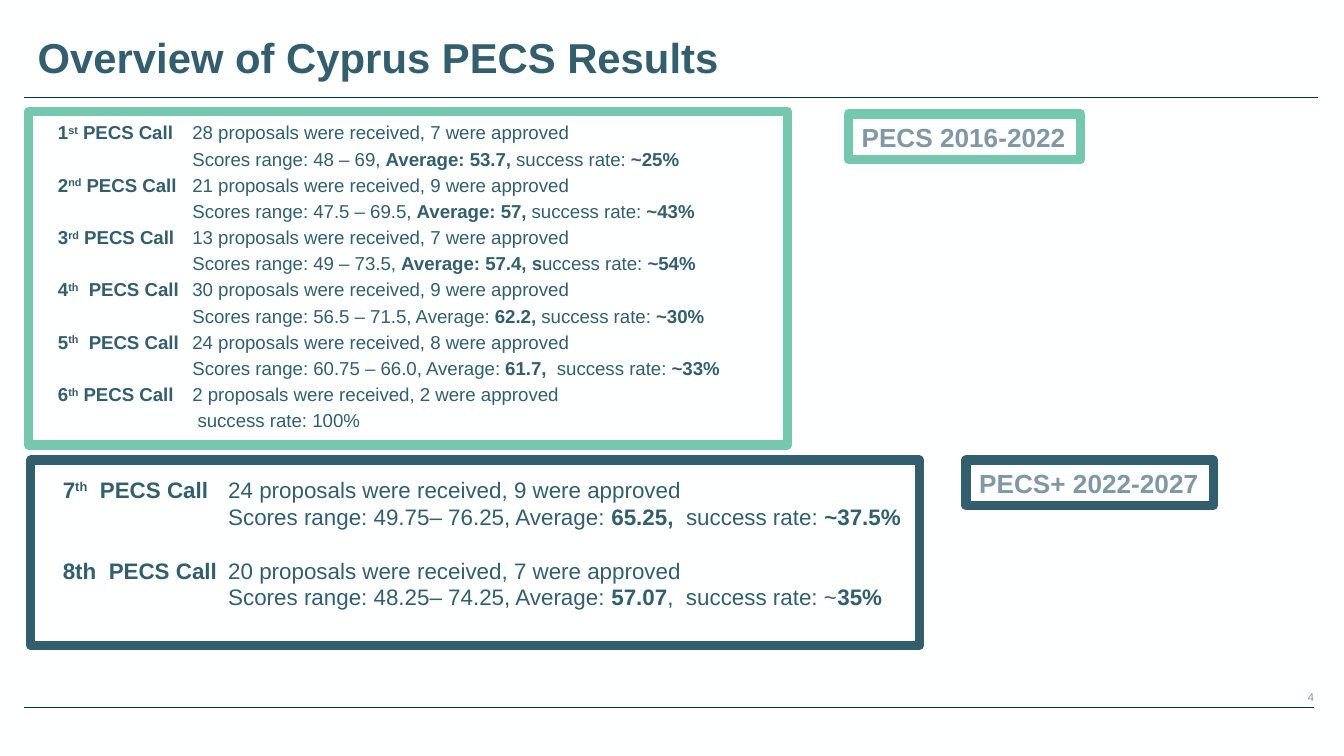
from pptx import Presentation
from pptx.dml.color import RGBColor
from pptx.enum.shapes import MSO_CONNECTOR, MSO_SHAPE
from pptx.enum.text import MSO_ANCHOR, PP_ALIGN
from pptx.oxml.ns import qn
from pptx.util import Pt
from lxml.etree import SubElement

NAVY, TEAL, GREEN, GREY, WHITE = "003249", "335E6E", "75C8AE", "8197A6", "FEFFFF"

FIRST_CALLS = [
    ("1", "st", " PECS Call", 28, 7,
     ["Scores range: 48 – 69, ", "Average: 53.7, ", "success rate: ", "~25%"]),
    ("2", "nd", " PECS Call", 21, 9,
     ["Scores range: 47.5 – 69.5, ", "Average: 57, ", "success rate: ", "~43%"]),
    ("3", "rd", " PECS Call", 13, 7,
     ["Scores range: 49 – 73.5, ", "Average: 57.4, s", "uccess rate: ", "~54%"]),
    ("4", "th", "  PECS Call", 30, 9,
     ["Scores range: 56.5 – 71.5, Average: ", "62.2, ", "success rate: ", "~30%"]),
    ("5", "th", "  PECS Call", 24, 8,
     ["Scores range: 60.75 – 66.0, Average: ", "61.7,  ", "success rate: ", "~33%"]),
    ("6", "th", " PECS Call", 2, 2, [" success rate: 100%"]),
]
PLUS_CALLS = [
    ("7", "th", "  PECS Call", 24, 9,
     ["Scores range: 49.75– 76.25, Average: ", "65.25,  ", "success rate: ", "~37.5%"]),
    ("8th", "", "  PECS Call", 20, 7,
     ["Scores range: 48.25– 74.25, Average: ", "57.07", ",  success rate: ~", "35%"]),
]


def rgb(value):
    return RGBColor.from_string(value)


class Deck:
    font = "Arial"

    def __init__(self, prs):
        self.s = prs.slides.add_slide(prs.slide_layouts[5])
        fill = self.s.background.fill
        fill.solid()
        fill.fore_color.rgb = rgb(WHITE)

    def run(self, p, text, size, color=TEAL, bold=False, raised=False):
        r = p.add_run()
        r.text = text
        r.font.name = self.font
        r.font.size = Pt(size)
        r.font.bold = bold
        r.font.color.rgb = rgb(color)
        if raised:
            r._r.get_or_add_rPr().set("baseline", "30000")

    def title(self, text, x, y, w, h, size):
        sp = self.s.shapes.title
        sp.left, sp.top, sp.width, sp.height = Pt(x), Pt(y), Pt(w), Pt(h)
        tf = sp.text_frame
        tf.vertical_anchor = MSO_ANCHOR.MIDDLE
        p = tf.paragraphs[0]
        p.alignment = PP_ALIGN.LEFT
        self.run(p, text, size, bold=True)

    def rule(self, x1, x2, y):
        line = self.s.shapes.add_connector(
            MSO_CONNECTOR.STRAIGHT, Pt(x1), Pt(y), Pt(x2), Pt(y))
        line.line.color.rgb = rgb(NAVY)
        line.line.width = Pt(0.75)
        SubElement(line._element.spPr, qn("a:effectLst"))

    def frame(self, x, y, w, h, color, label=None):
        sp = self.s.shapes.add_shape(MSO_SHAPE.RECTANGLE, Pt(x), Pt(y), Pt(w), Pt(h))
        sp.shadow.inherit = False
        sp.fill.background()
        sp.line.color.rgb = rgb(color)
        sp.line.width = Pt(5)
        if label:
            tf = sp.text_frame
            tf.word_wrap = False
            p = tf.paragraphs[0]
            p.alignment = PP_ALIGN.LEFT
            self.run(p, label, 14, GREY, True)

    def textbox(self, x, y, w, h):
        tf = self.s.shapes.add_textbox(Pt(x), Pt(y), Pt(w), Pt(h)).text_frame
        tf.word_wrap = True
        return tf

    def page_number(self, number, x, y, w, h):
        tf = self.textbox(x, y, w, h)
        tf.margin_right = 0
        p = tf.paragraphs[0]
        p.alignment = PP_ALIGN.RIGHT
        self.run(p, number, 6, GREY)

    def line(self, tf, before, tab):
        p = tf.paragraphs[0]
        if p.runs:
            p = tf.add_paragraph()
            p.space_before = Pt(before)
        tabs = SubElement(p._p.get_or_add_pPr(), qn("a:tabLst"))
        SubElement(tabs, qn("a:tab"), pos=str(Pt(tab)), algn="l")
        return p

    def calls(self, rows, x, y, w, h, size, tab, gap, call_gap):
        tf = self.textbox(x, y, w, h)
        for ordinal, suffix, label, received, approved, scores in rows:
            p = self.line(tf, call_gap, tab)
            self.run(p, ordinal, size, bold=True)
            if suffix:
                self.run(p, suffix, size, bold=True, raised=True)
            self.run(p, label + "\t", size, bold=True)
            self.run(p, f"{received} proposals were received, {approved} were approved", size)
            p = self.line(tf, gap, tab)
            self.run(p, "\t", size)
            for i, text in enumerate(scores):
                self.run(p, text, size, bold=i % 2 == 1)


def main():
    prs = Presentation()
    prs.slide_width, prs.slide_height = Pt(720), Pt(405)
    deck = Deck(prs)
    deck.page_number("4", 686, 366.5, 18, 14.4)
    deck.rule(13, 704, 379.2)
    deck.rule(13, 706, 52.2)
    deck.title("Overview of Cyprus PECS Results", 13, 13.3, 595.4, 34.6, 22.4)
    deck.calls(FIRST_CALLS, 24, 61.4, 390, 174, 10, 72, 2, 2)
    deck.frame(16.5, 246.5, 476, 99.4, TEAL)
    deck.frame(15.1, 59.8, 406.8, 178.6, GREEN)
    deck.frame(454.5, 61, 124.5, 24.4, GREEN, "PECS 2016-2022")
    deck.frame(517.5, 246.5, 132.5, 24.4, TEAL, "PECS+ 2022-2027")
    deck.calls(PLUS_CALLS, 26.6, 251.4, 476, 90, 12, 88.6, 0, 14.5)
    prs.save("out.pptx")


if __name__ == "__main__":
    main()
